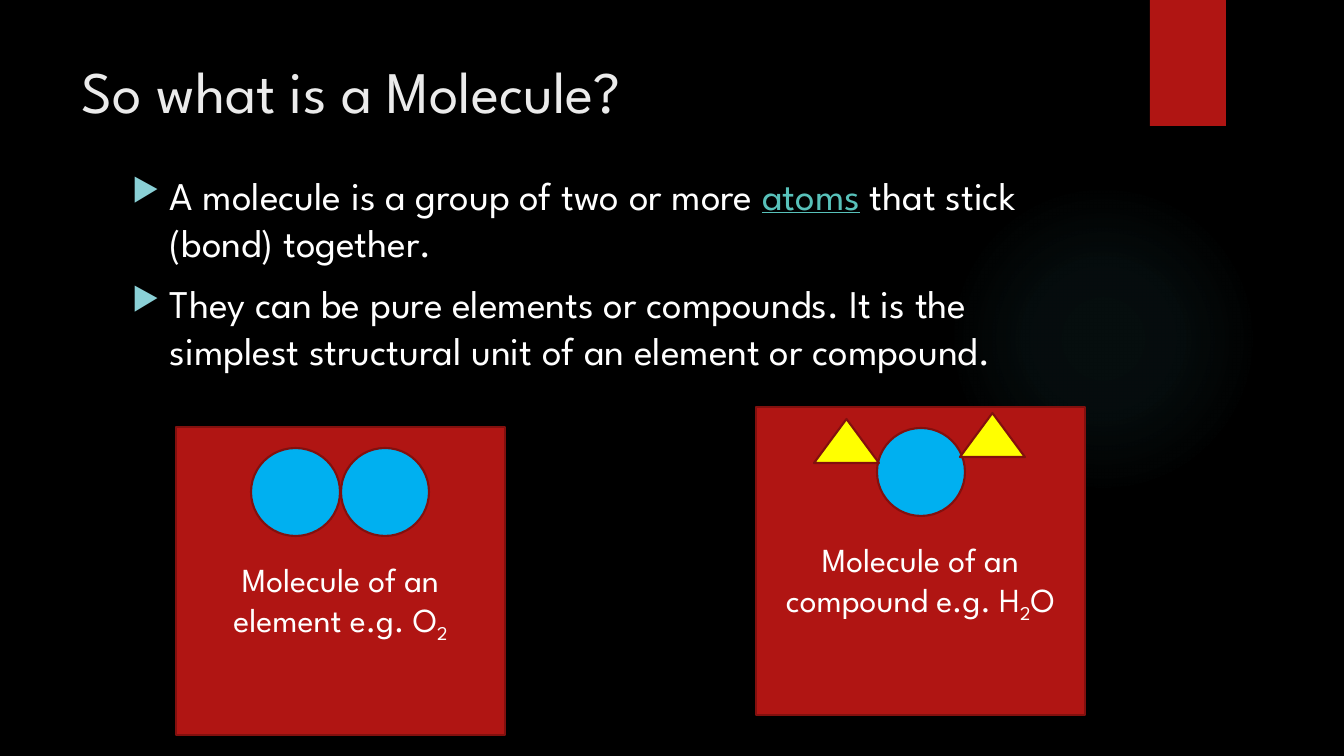
from pptx import Presentation
from pptx.dml.color import RGBColor
from pptx.enum.shapes import MSO_SHAPE as Preset
from pptx.enum.text import MSO_ANCHOR as Anchor, PP_ALIGN as Align
from pptx.oxml import parse_xml
from pptx.oxml.ns import nsdecls, qn
from pptx.util import Pt

SCALE = 12192000 / 1344  # EMU per px
FONT = "League Spartan"
COLORS = {
    "background": "000000", "glow": "50B9C1", "red": "B01513",
    "outline": "82100E", "title": "EBEBEB", "text": "FFFFFF",
    "link": "58C1BA", "bullet": "8AD0D6", "oxygen": "00B0F0",
    "hydrogen": "FFFF00",
}


def px(length):
    return round(length * SCALE)


def rgb(name):
    return RGBColor.from_string(COLORS[name])


def element(xml):
    """Parse an XML fragment whose first tag is in the a: namespace."""
    tag_end = min(xml.index(mark) for mark in " />" if mark in xml)
    return parse_xml(xml[:tag_end] + " " + nsdecls("a") + xml[tag_end:])


def add_preset(slide, preset, box, fill, line=None):
    shape = slide.shapes.add_shape(preset, *map(px, box))
    shape.shadow.inherit = False
    shape.fill.solid()
    shape.fill.fore_color.rgb = rgb(fill)
    if line:
        shape.line.color.rgb = rgb(line)
        shape.line.width = Pt(1.5)
    else:
        shape.line.fill.background()
    return shape


def add_run(paragraph, text, size, color="text", underline=None, baseline=None):
    run = paragraph.add_run()
    run.text = text
    run.font.name = FONT
    run.font.size = Pt(size)
    run.font.color.rgb = rgb(color)
    run.font.underline = underline
    if baseline:
        run.font._element.set("baseline", str(baseline * 1000))


def add_text_box(slide, box):
    frame = slide.shapes.add_textbox(*map(px, box)).text_frame
    frame.word_wrap = True
    return frame


def add_backdrop(slide):
    slide.background.fill.solid()
    slide.background.fill.fore_color.rgb = rgb("background")

    # Soft round glow
    glow = add_preset(slide, Preset.OVAL, (948, 184, 310, 310), "glow")
    stops = "".join(
        f'<a:gs pos="{position * 1000}"><a:srgbClr val="{COLORS["glow"]}">'
        f'<a:alpha val="{alpha * 1000}"/></a:srgbClr></a:gs>'
        for position, alpha in ((0, 7), (36, 6), (69, 0)))
    gradient = element(
        f'<a:gradFill><a:gsLst>{stops}</a:gsLst><a:path path="circle">'
        '<a:fillToRect l="50000" t="50000" r="50000" b="50000"/>'
        '</a:path></a:gradFill>')
    properties = glow._element.spPr
    properties.replace(properties.find(qn("a:solidFill")), gradient)

    # Red tab with its shadow
    tab = add_preset(slide, Preset.RECTANGLE, (1150, 0, 76, 126), "red")
    tab._element.spPr.find(qn("a:effectLst")).append(element(
        f'<a:outerShdw blurRad="{Pt(3)}" dist="{Pt(2)}" dir="5400000">'
        '<a:srgbClr val="000000"><a:alpha val="45000"/></a:srgbClr>'
        '</a:outerShdw>'))


def add_title(slide, box, text):
    add_run(add_text_box(slide, box).paragraphs[0], text, 42, "title")


def add_bullets(slide, box, items):
    frame = add_text_box(slide, box)
    for index, runs in enumerate(items):
        paragraph = frame.add_paragraph() if index else frame.paragraphs[0]
        properties = paragraph._p.get_or_add_pPr()
        properties.set("marL", str(px(38)))
        properties.set("indent", str(px(-38)))
        for xml in (f'<a:buClr><a:srgbClr val="{COLORS["bullet"]}"/></a:buClr>',
                    '<a:buSzPct val="80000"/>', '<a:buChar char="▶"/>'):
            properties.append(element(xml))
        if index:
            paragraph.space_before = Pt(10)
        for text, color, underline in runs:
            add_run(paragraph, text, 28, color, underline)


def add_molecule_card(slide, left, top, caption, atoms):
    """Red card with a caption; atoms are placed relative to its corner."""
    card = add_preset(slide, Preset.RECTANGLE, (left, top, 329, 308),
                      "red", "outline")
    frame = card.text_frame
    frame.word_wrap = True
    frame.vertical_anchor = Anchor.MIDDLE
    frame.margin_top = px(46)  # sets the caption below the middle
    paragraph = frame.paragraphs[0]
    paragraph.alignment = Align.CENTER
    for text, baseline in caption:
        add_run(paragraph, text, 24, baseline=baseline)

    for preset, x, y, width, height, fill in atoms:
        add_preset(slide, preset, (left + x, top + y, width, height),
                   fill, "outline")


def main():
    presentation = Presentation()
    presentation.slide_width, presentation.slide_height = px(1344), px(756)
    slide = presentation.slides.add_slide(presentation.slide_layouts[6])

    add_backdrop(slide)
    add_title(slide, (72, 50, 1037, 154), "So what is a Molecule?")
    add_bullets(slide, (122, 166, 986, 523), [
        [("A molecule is a group of two or more ", "text", None),
         ("atoms", "link", True),
         (" that stick (bond) together.", "text", None)],
        [("They can be pure elements or compounds. It is the simplest "
          "structural unit of an element or compound.", "text", None)],
    ])

    # Element: two oxygen atoms side by side
    add_molecule_card(
        slide, 176, 427,
        [("Molecule of an element e.g. O", None), ("2", -25)],
        [(Preset.OVAL, 75, 21, 89, 88, "oxygen"),
         (Preset.OVAL, 165, 21, 88, 88, "oxygen")])

    # Compound: one oxygen atom between two hydrogen atoms
    add_molecule_card(
        slide, 756, 407,
        [("Molecule of an compound e.g. H", None), ("2", -25), ("O", None)],
        [(Preset.OVAL, 121, 21, 88, 88, "oxygen"),
         (Preset.ISOSCELES_TRIANGLE, 204, 6, 65, 44, "hydrogen"),
         (Preset.ISOSCELES_TRIANGLE, 58, 12, 65, 44, "hydrogen")])

    presentation.save("out.pptx")


if __name__ == "__main__":
    main()
